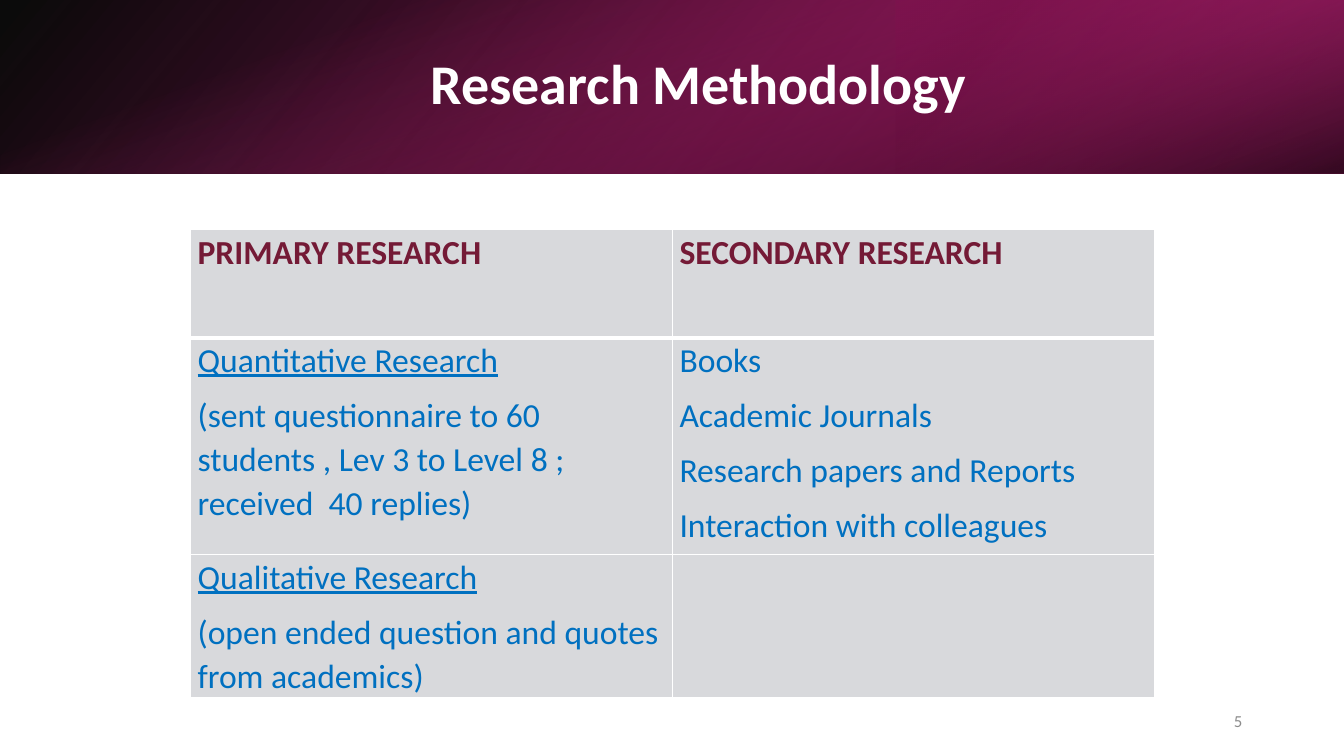
from dataclasses import dataclass

import pptx
import pptx.dml.color
import pptx.enum.shapes
import pptx.enum.text
import pptx.oxml.ns
import pptx.util
from lxml import etree

ALIGN = pptx.enum.text.PP_ALIGN
MIDDLE = pptx.enum.text.MSO_ANCHOR.MIDDLE
SLIDE_WIDTH = pptx.util.Inches(13.33)
SLIDE_HEIGHT = pptx.util.Inches(7.5)
BANNER_HEIGHT = 22.93  # percent of the slide's height
COLORS = {
    "white": "FFFFFF",
    "black": "000000",
    "plum": "781049",
    "magenta": "B4186E",
    "pink": "E32D91",
    "maroon": "741A36",
    "blue": "0070C0",
    "cell": "D8D9DC",
    "grey": "8C8C8C",
}


@dataclass(frozen=True)
class Stop:
    position: float
    color: str
    opacity: int


@dataclass(frozen=True)
class BannerLayer:
    left: float
    width: float
    turn: int
    flipped: bool
    angle: int
    stops: tuple[Stop, Stop]


@dataclass(frozen=True)
class Words:
    text: str
    size: int = 24
    color: str = "blue"
    bold: bool = False
    underline: bool = False
    align: ALIGN = ALIGN.JUSTIFY


@dataclass(frozen=True)
class Label:
    left: float
    top: float
    width: float
    height: float
    words: Words
    line_spacing: float = 1.0


LAYERS = [
    BannerLayer(0, 100, 0, True, 140, (Stop(0, "black", 96), Stop(1, "magenta", 100))),
    BannerLayer(66.67, 33.33, 180, True, 320, (Stop(0.19, "plum", 68), Stop(1, "pink", 79))),
    BannerLayer(0, 100, 90, False, 340, (Stop(0.23, "pink", 0), Stop(0.99, "black", 74))),
]
LABELS = [
    Label(11.25, 5.07, 82.37, 12.8,
          Words("Research Methodology ", 40, "white", bold=True, align=ALIGN.CENTER), 0.9),
    Label(70.67, 92.67, 22.5, 5.33, Words("5", 12, "grey", align=ALIGN.RIGHT)),
]
ROW_HEIGHTS = [14.27, 28.67, 18.8]
RESEARCH = [
    [
        [Words("PRIMARY RESEARCH", color="maroon", bold=True, align=ALIGN.LEFT)],
        [Words("SECONDARY RESEARCH", color="maroon", bold=True, align=ALIGN.LEFT)],
    ],
    [
        [
            Words("Quantitative Research", underline=True),
            Words("(sent questionnaire to 60 students , Lev 3 to Level 8 ; received  40 replies)",
                  align=ALIGN.LEFT),
        ],
        [
            Words("Books"),
            Words("Academic Journals"),
            Words("Research papers and Reports"),
            Words("Interaction with colleagues"),
        ],
    ],
    [
        [
            Words("Qualitative Research", underline=True),
            Words("(open ended question and quotes from academics)", align=ALIGN.LEFT),
        ],
        [],
    ],
]


def rgb(name: str) -> pptx.dml.color.RGBColor:
    return pptx.dml.color.RGBColor.from_string(COLORS[name])


def across(percent: float) -> int:
    return round(SLIDE_WIDTH * percent / 100)


def down(percent: float) -> int:
    return round(SLIDE_HEIGHT * percent / 100)


def add_layer(page, layer: BannerLayer) -> None:
    """Draw one translucent gradient; a quarter turn swaps sides about the centre."""
    left, top, width, height = across(layer.left), 0, across(layer.width), down(BANNER_HEIGHT)
    if layer.turn == 90:
        left, top = left + (width - height) // 2, (height - width) // 2
        width, height = height, width
    band = page.shapes.add_shape(
        pptx.enum.shapes.MSO_SHAPE.RECTANGLE, left, top, width, height)
    band.shadow.inherit = False
    band.line.fill.background()
    band.rotation = layer.turn
    if layer.flipped:
        band.element.spPr.xfrm.set("flipH", "1")
    band.fill.gradient()
    band.fill.gradient_angle = 360 - layer.angle
    for gradient_stop, stop in zip(band.fill.gradient_stops, layer.stops):
        gradient_stop.position = stop.position
        gradient_stop.color.rgb = rgb(stop.color)
    shades = band.element.spPr.iter(pptx.oxml.ns.qn("a:srgbClr"))
    for shade, stop in zip(list(shades), layer.stops):
        alpha = etree.SubElement(shade, pptx.oxml.ns.qn("a:alpha"))
        alpha.set("val", str(stop.opacity * 1000))


def write(para, words: Words, line_spacing: float, space_after: int = 0) -> None:
    para.alignment = words.align
    para.line_spacing = line_spacing
    para.space_after = pptx.util.Pt(space_after)
    span = para.add_run()
    span.text = words.text
    span.font.name = "Calibri"
    span.font.size = pptx.util.Pt(words.size)
    span.font.bold = words.bold
    span.font.underline = words.underline
    span.font.color.rgb = rgb(words.color)


def add_label(page, label: Label) -> None:
    box = page.shapes.add_textbox(
        across(label.left), down(label.top), across(label.width), down(label.height))
    box.text_frame.word_wrap = True
    box.text_frame.vertical_anchor = MIDDLE
    write(box.text_frame.paragraphs[0], label.words, label.line_spacing)


def set_borders(cell, bottom_points: int) -> None:
    """Give the cell white edges, one point wide except at the bottom."""
    properties = cell._tc.get_or_add_tcPr()
    widths = {"a:lnL": 1, "a:lnR": 1, "a:lnT": 1, "a:lnB": bottom_points}
    for index, (side, points) in enumerate(widths.items()):
        edge = etree.Element(pptx.oxml.ns.qn(side), w=str(pptx.util.Pt(points)))
        fill = etree.SubElement(edge, pptx.oxml.ns.qn("a:solidFill"))
        etree.SubElement(fill, pptx.oxml.ns.qn("a:srgbClr"), val=COLORS["white"])
        properties.insert(index, edge)


def add_research_table(page) -> None:
    table = page.shapes.add_table(
        len(RESEARCH), len(RESEARCH[0]),
        across(14.18), down(30.4), across(71.72), down(sum(ROW_HEIGHTS))).table
    table.horz_banding = False
    for row_index, (height, row) in enumerate(zip(ROW_HEIGHTS, RESEARCH)):
        table.rows[row_index].height = down(height)
        for column_index, entries in enumerate(row):
            cell = table.cell(row_index, column_index)
            cell.fill.solid()
            cell.fill.fore_color.rgb = rgb("cell")
            cell.margin_left = cell.margin_right = pptx.util.Inches(0.07)
            cell.margin_top = cell.margin_bottom = 0
            set_borders(cell, 3 if row_index == 0 else 1)
            frame = cell.text_frame
            for index, words in enumerate(entries):
                para = frame.add_paragraph() if index else frame.paragraphs[0]
                write(para, words, line_spacing=1.07, space_after=8)


def main() -> None:
    deck = pptx.Presentation()
    deck.slide_width, deck.slide_height = SLIDE_WIDTH, SLIDE_HEIGHT
    page = deck.slides.add_slide(deck.slide_layouts[6])
    for layer in LAYERS:
        add_layer(page, layer)
    add_research_table(page)
    for label in LABELS:
        add_label(page, label)
    deck.save("out.pptx")


if __name__ == "__main__":
    main()
